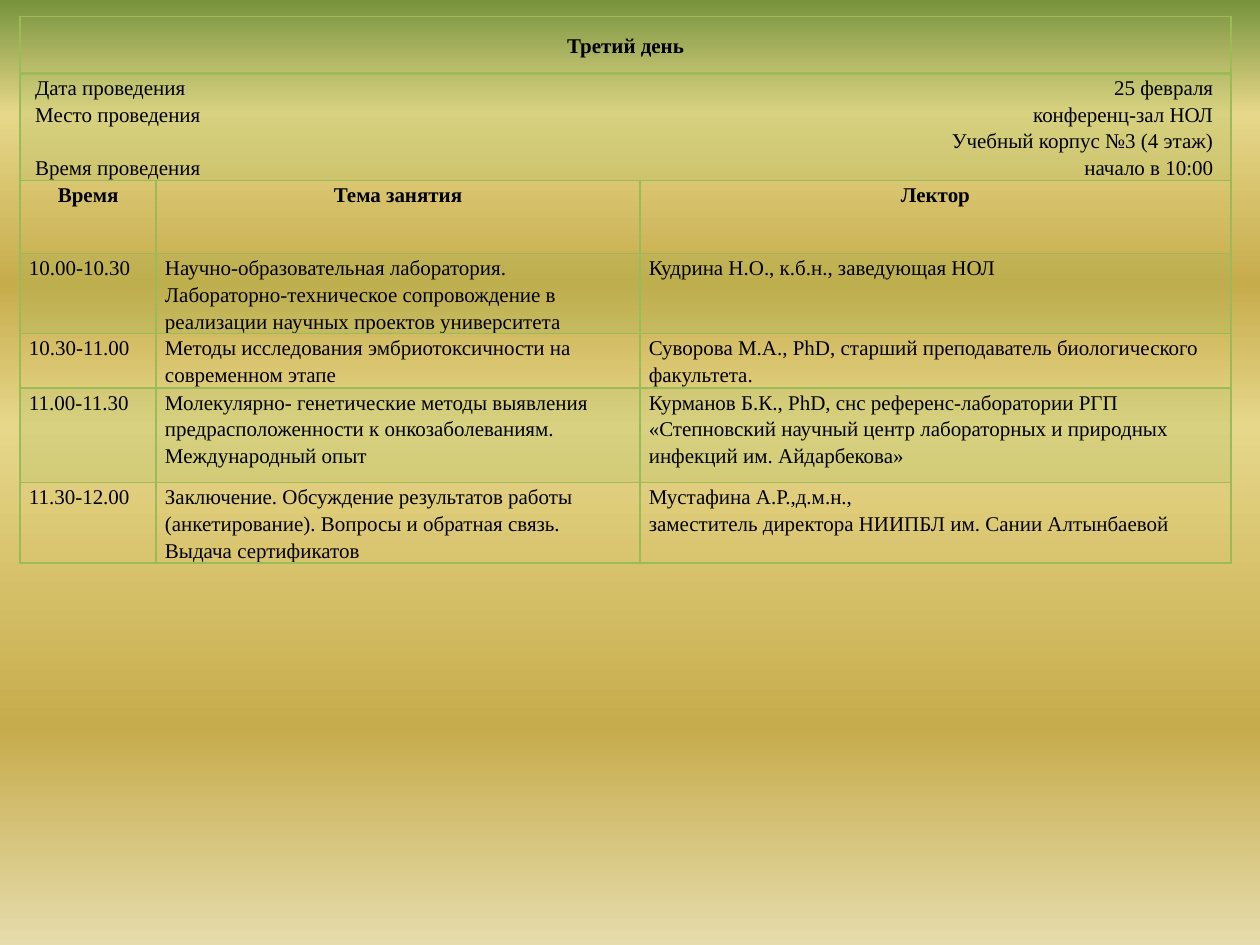
from lxml import etree
from pptx import Presentation
from pptx.dml.color import RGBColor
from pptx.enum.text import MSO_ANCHOR, PP_ALIGN
from pptx.oxml.ns import qn
from pptx.util import Inches, Pt

CENTER, LEFT = PP_ALIGN.CENTER, PP_ALIGN.LEFT
TOP, MIDDLE = MSO_ANCHOR.TOP, MSO_ANCHOR.MIDDLE
FONT, BLACK, GREEN = "Times New Roman", "000000", "9BBB59"
BACKGROUND = [(0, "77933C"), (12, "E6D78A"), (30, "C7AC4C"),
              (45, "E6D78A"), (77, "C7AC4C"), (100, "E6DCAC")]
COLUMNS = [1.08, 3.84, 4.69]
ROWS = [0.45, 0.85, 0.58, 0.63, 0.43, 0.75, 0.63]
DETAILS_TAB = 9.35

TITLE = "Третий день"
DETAILS = [
    "Дата проведения\t25 февраля",
    "Место проведения\tконференц-зал НОЛ",
    "\tУчебный корпус №3 (4 этаж)",
    "Время проведения\tначало в 10:00",
]
HEADINGS = ["Время", "Тема занятия", "Лектор"]
SESSIONS = [
    ("10.00-10.30",
     "Научно-образовательная лаборатория. Лабораторно-техническое "
     "сопровождение в реализации научных проектов университета",
     "Кудрина Н.О., к.б.н., заведующая НОЛ"),
    ("10.30-11.00",
     "Методы исследования эмбриотоксичности на современном этапе",
     "Суворова М.А., PhD, старший преподаватель биологического факультета."),
    ("11.00-11.30",
     "Молекулярно- генетические методы выявления предрасположенности к "
     "онкозаболеваниям. Международный опыт",
     "Курманов Б.К., PhD, снс референс-лаборатории РГП «Степновский научный "
     "центр лабораторных и природных инфекций им. Айдарбекова»"),
    ("11.30-12.00",
     "Заключение. Обсуждение результатов работы (анкетирование). Вопросы и "
     "обратная связь. Выдача сертификатов",
     "Мустафина А.Р.,д.м.н.,\n"
     "заместитель директора НИИПБЛ им. Сании Алтынбаевой"),
]


def color(value):
    """Turn a hex string into a colour."""
    return RGBColor.from_string(value)


def add_node(parent, tag, **attributes):
    """Append a drawing element to its parent."""
    return etree.SubElement(parent, qn(tag), attributes)


def paint_background(page):
    """Fill the page with the vertical gradient."""
    fill = page.background.fill
    fill.gradient()
    fill.gradient_angle = 270
    stops = next(page.element.iter(qn("a:gsLst")))
    for stop in list(stops):
        stops.remove(stop)
    for share, value in BACKGROUND:
        stop = add_node(stops, "a:gs", pos=str(share * 1000))
        add_node(stop, "a:srgbClr", val=value)


def style_cell(cell, tinted, bottom=1):
    """Give a cell its borders, margins and fill."""
    properties = cell._tc.get_or_add_tcPr()
    for side, width in (("L", 1), ("R", 1), ("T", 1), ("B", bottom)):
        line = add_node(properties, f"a:ln{side}", w=str(Pt(width)))
        add_node(add_node(line, "a:solidFill"), "a:srgbClr", val=GREEN)
    cell.margin_left = cell.margin_right = Inches(0.07)
    cell.margin_top = cell.margin_bottom = 0
    if tinted:
        cell.fill.solid()
        cell.fill.fore_color.rgb = color(GREEN)
        tint = next(properties.find(qn("a:solidFill")).iter(qn("a:srgbClr")))
        add_node(tint, "a:alpha", val="20000")
    else:
        cell.fill.background()


def write_cell(cell, text, align=LEFT, bold=False, anchor=TOP):
    """Write text into a cell and format its paragraphs."""
    cell.text_frame.text = text
    cell.vertical_anchor = anchor
    for para in cell.text_frame.paragraphs:
        para.alignment = align
        para.line_spacing = 1.15
        for span in para.runs:
            span.font.name = FONT
            span.font.size = Pt(12)
            span.font.bold = bold
            span.font.color.rgb = color(BLACK)


def write_details(cell):
    """Write the labels at the left and their values at a right tab."""
    write_cell(cell, "\n".join(DETAILS), anchor=MIDDLE)
    cell.margin_left = Inches(0.12)
    for para in cell.text_frame.paragraphs:
        tabs = add_node(para._p.get_or_add_pPr(), "a:tabLst")
        add_node(tabs, "a:tab", pos=str(Inches(DETAILS_TAB)), algn="r")


def add_schedule(page, left, top):
    """Place the schedule table with its top left corner at a point."""
    frame = page.shapes.add_table(
        len(ROWS), len(COLUMNS), Inches(left), Inches(top),
        Inches(sum(COLUMNS)), Inches(sum(ROWS)))
    table = frame.table
    table.first_row = table.horz_banding = False
    for column, width in zip(table.columns, COLUMNS):
        column.width = Inches(width)
    for index, (row, height) in enumerate(zip(table.rows, ROWS)):
        row.height = Inches(height)
        for cell in row.cells:
            style_cell(cell, index % 2 == 1, 2 if index == 0 else 1)
    for index in (0, 1):
        table.cell(index, 0).merge(table.cell(index, len(COLUMNS) - 1))
    write_cell(table.cell(0, 0), TITLE, CENTER, True, MIDDLE)
    write_details(table.cell(1, 0))
    for index, heading in enumerate(HEADINGS):
        write_cell(table.cell(2, index), heading, CENTER, True)
    for row, session in enumerate(SESSIONS, 3):
        for index, text in enumerate(session):
            write_cell(table.cell(row, index), text)


def main():
    """Build the deck and save it."""
    deck = Presentation()
    deck.slide_width, deck.slide_height = Inches(10), Inches(7.5)
    page = deck.slides.add_slide(deck.slide_layouts[6])
    paint_background(page)
    add_schedule(page, 0.16, 0.13)
    deck.save("out.pptx")


if __name__ == "__main__":
    main()
